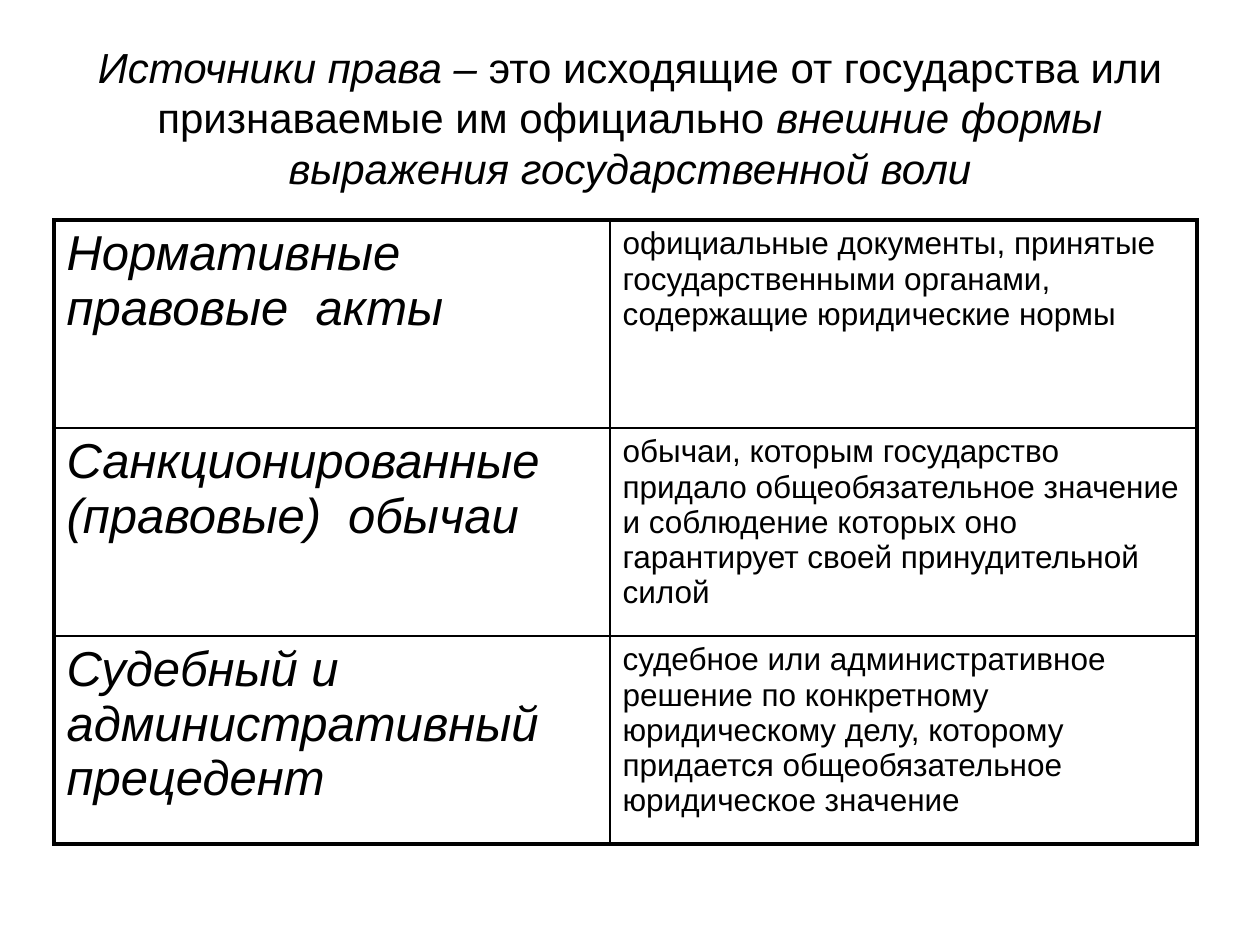
from dataclasses import dataclass

from lxml import etree
from pptx import Presentation
from pptx.dml.color import RGBColor
from pptx.enum.text import MSO_ANCHOR, MSO_AUTO_SIZE, PP_ALIGN
from pptx.oxml.ns import qn
from pptx.util import Emu, Pt

LEFT, CENTER = PP_ALIGN.LEFT, PP_ALIGN.CENTER
TOP, MIDDLE = MSO_ANCHOR.TOP, MSO_ANCHOR.MIDDLE
NO_AUTOFIT = MSO_AUTO_SIZE.NONE

TITLE = [
    ("Источники права – ", True),
    ("это исходящие от государства или признаваемые им официально", False),
    (" внешние формы выражения государственной воли", True),
]
SOURCES = [
    ("Нормативные правовые  акты",
     "официальные документы, принятые государственными органами, "
     "содержащие юридические нормы"),
    ("Санкционированные (правовые)  обычаи",
     "обычаи, которым государство придало общеобязательное значение "
     "и соблюдение которых оно гарантирует своей принудительной силой"),
    ("Судебный и административный прецедент",
     "судебное или административное решение по конкретному "
     "юридическому делу, которому придается общеобязательное "
     "юридическое значение"),
]


@dataclass(frozen=True)
class Theme:
    font: str = "Arial"
    ink: str = "000000"
    title_size: int = 24
    name_size: int = 28
    meaning_size: int = 18
    outer_line: float = 2.25
    inner_line: float = 1


THEME = Theme()
SLIDE_SIZE = (1260, 945)
TITLE_BOX = (63, 38, 1134, 158)
TABLE_ORIGIN = (54, 220)
COLUMN_WIDTHS = (556, 587)
ROW_HEIGHT = 208


def px(length):
    return Emu(round(length * 914400 / 126))


def write_text(text_frame, runs, size, align=LEFT):
    text_frame.word_wrap = True
    paragraph = text_frame.paragraphs[0]
    paragraph.alignment = align
    for text, italic in runs:
        run = paragraph.add_run()
        run.text = text
        run.font.name = THEME.font
        run.font.size = Pt(size)
        run.font.italic = italic
        run.font.color.rgb = RGBColor.from_string(THEME.ink)


def set_borders(cell, widths):
    properties = cell._tc.get_or_add_tcPr()
    for position, (side, width) in enumerate(widths.items()):
        line = etree.Element(qn(f"a:ln{side}"), w=str(Pt(width)))
        fill = etree.SubElement(line, qn("a:solidFill"))
        etree.SubElement(fill, qn("a:srgbClr"), val=THEME.ink)
        properties.insert(position, line)


def add_title(slide):
    title = slide.shapes.title
    title.left, title.top, title.width, title.height = map(px, TITLE_BOX)
    title.text_frame.auto_size = NO_AUTOFIT
    title.text_frame.vertical_anchor = MIDDLE
    write_text(title.text_frame, TITLE, THEME.title_size, align=CENTER)


def add_sources_table(slide):
    row_count, column_count = len(SOURCES), len(COLUMN_WIDTHS)
    size = (sum(COLUMN_WIDTHS), ROW_HEIGHT * row_count)
    table = slide.shapes.add_table(
        row_count, column_count, *map(px, TABLE_ORIGIN + size)).table
    table.first_row = table.horz_banding = False
    for column, width in zip(table.columns, COLUMN_WIDTHS):
        column.width = px(width)

    formats = [(THEME.name_size, True), (THEME.meaning_size, False)]
    for row_index, source in enumerate(SOURCES):
        table.rows[row_index].height = px(ROW_HEIGHT)
        for column_index, text in enumerate(source):
            cell = table.cell(row_index, column_index)
            cell.fill.background()
            cell.vertical_anchor = TOP
            text_size, italic = formats[column_index]
            write_text(cell.text_frame, [(text, italic)], text_size)
            outer_sides = {
                "L": column_index == 0,
                "R": column_index == column_count - 1,
                "T": row_index == 0,
                "B": row_index == row_count - 1,
            }
            set_borders(cell, {
                side: THEME.outer_line if outer else THEME.inner_line
                for side, outer in outer_sides.items()
            })


def main():
    presentation = Presentation()
    presentation.slide_width, presentation.slide_height = map(px, SLIDE_SIZE)
    slide = presentation.slides.add_slide(presentation.slide_layouts[5])
    add_title(slide)
    add_sources_table(slide)
    presentation.save("out.pptx")


if __name__ == "__main__":
    main()
